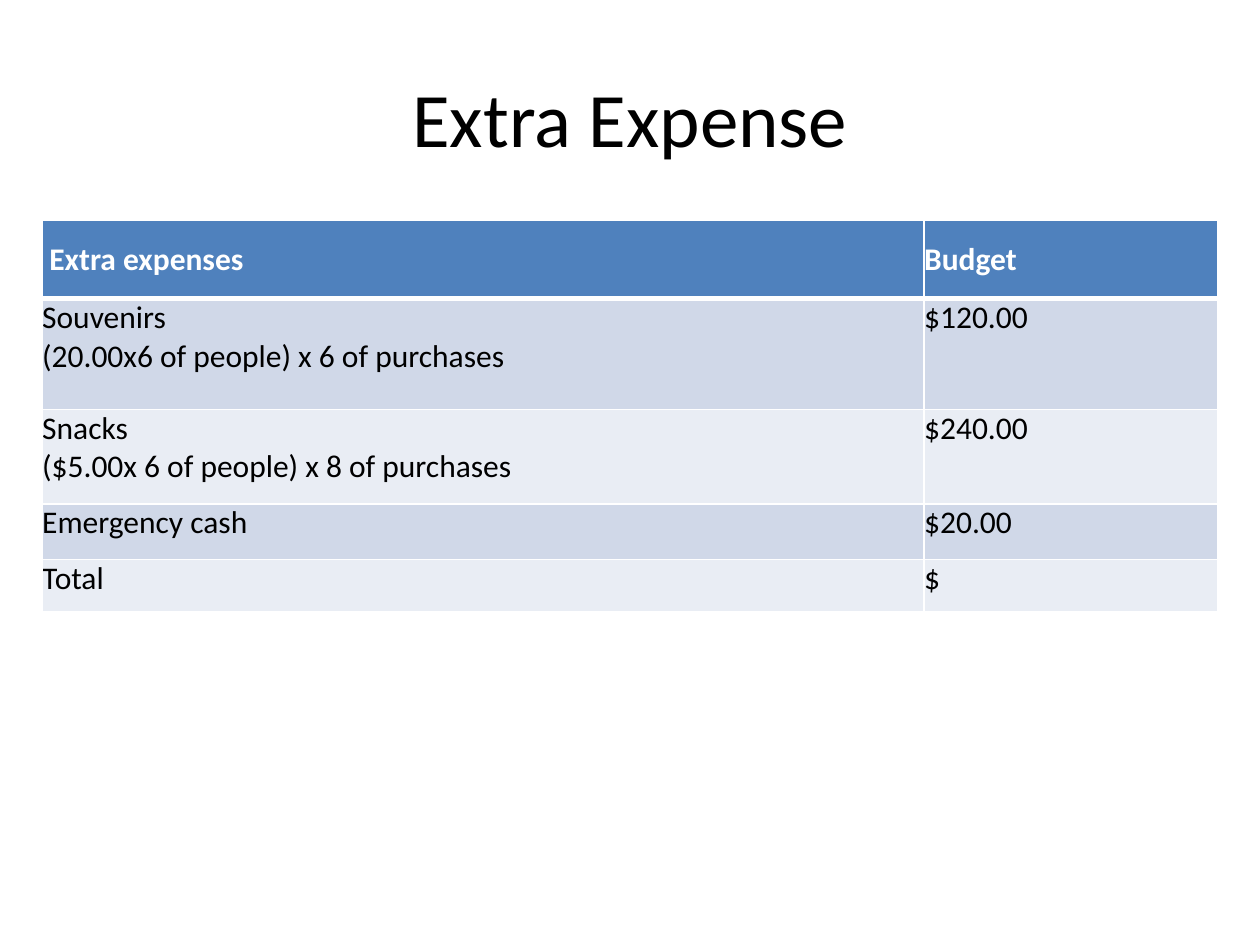
from dataclasses import dataclass

from lxml.etree import SubElement
from pptx import Presentation
from pptx.dml.color import RGBColor
from pptx.enum.text import MSO_ANCHOR as Anchor, PP_ALIGN as Align
from pptx.oxml.ns import qn
from pptx.util import Inches, Pt

WIDTH, HEIGHT = Inches(10), Inches(7.5)
FONT = "Calibri"
BLACK, WHITE, BLUE = "000000", "FFFFFF", "4F81BD"
BANDS = ("D0D8E8", "E9EDF4")
COLUMNS = (7, 2.33)
NO_MARGINS = {f"margin_{side}": 0 for side in ("left", "right", "top", "bottom")}


@dataclass
class Expense:
    label: str
    budget: str
    height: float


EXPENSES = [
    Expense(" Extra expenses", "Budget", 0.62),
    Expense("Souvenirs\n(20.00x6 of people) x 6 of purchases", "$120.00", 0.88),
    Expense("Snacks\n($5.00x 6 of people) x 8 of purchases", "$240.00", 0.75),
    Expense("Emergency cash", "$20.00", 0.44),
    Expense("Total", "$", 0.42),
]


def color(value: str) -> RGBColor:
    return RGBColor.from_string(value)


def set_all(target, values: dict) -> None:
    for name, value in values.items():
        setattr(target, name, value)


def write(frame, text: str, align: Align, size: int, ink: str, bold: bool) -> None:
    frame.text = text
    for para in frame.paragraphs:
        para.alignment = align
        for span in para.runs:
            set_all(span.font, {"name": FONT, "size": Pt(size), "bold": bold})
            span.font.color.rgb = color(ink)


def draw_borders(cell, top: int, bottom: int) -> None:
    """Add white cell borders; widths are in points."""
    properties = cell._tc.get_or_add_tcPr()
    for side, width in {"L": 1, "R": 1, "T": top, "B": bottom}.items():
        line = SubElement(properties, qn(f"a:ln{side}"), w=str(Pt(width)))
        fill = SubElement(line, qn("a:solidFill"))
        SubElement(fill, qn("a:srgbClr"), val=WHITE)


def draw_cell(cell, text: str, row: int) -> None:
    header = row == 0
    anchor = Anchor.MIDDLE if header else Anchor.TOP
    set_all(cell, {**NO_MARGINS, "vertical_anchor": anchor})
    write(cell.text_frame, text, Align.LEFT, 18, WHITE if header else BLACK, header)
    # Borders come before the fill in the cell's properties
    draw_borders(cell, top=3 if row == 1 else 1, bottom=3 if header else 1)
    cell.fill.solid()
    cell.fill.fore_color.rgb = color(BLUE if header else BANDS[(row - 1) % 2])


def draw_table(page, expenses: list[Expense]) -> None:
    width = Inches(sum(COLUMNS))
    height = Inches(sum(expense.height for expense in expenses))
    table = page.shapes.add_table(
        len(expenses), len(COLUMNS), (WIDTH - width) // 2, Inches(1.75), width, height
    ).table
    for column, share in zip(table.columns, COLUMNS):
        column.width = Inches(share)
    for row, expense in enumerate(expenses):
        table.rows[row].height = Inches(expense.height)
        for column, text in enumerate((expense.label, expense.budget)):
            draw_cell(table.cell(row, column), text, row)


def main() -> None:
    deck = Presentation()
    set_all(deck, {"slide_width": WIDTH, "slide_height": HEIGHT})
    page = deck.slides.add_slide(deck.slide_layouts[5])

    # Title
    title = page.shapes.title
    set_all(title, {"left": int(WIDTH * 0.05), "top": int(HEIGHT * 0.04),
                    "width": int(WIDTH * 0.9), "height": Inches(1.25)})
    title.text_frame.vertical_anchor = Anchor.MIDDLE
    write(title.text_frame, "Extra Expense", Align.CENTER, 44, BLACK, False)

    # Expense table
    draw_table(page, EXPENSES)
    deck.save("out.pptx")


if __name__ == "__main__":
    main()
